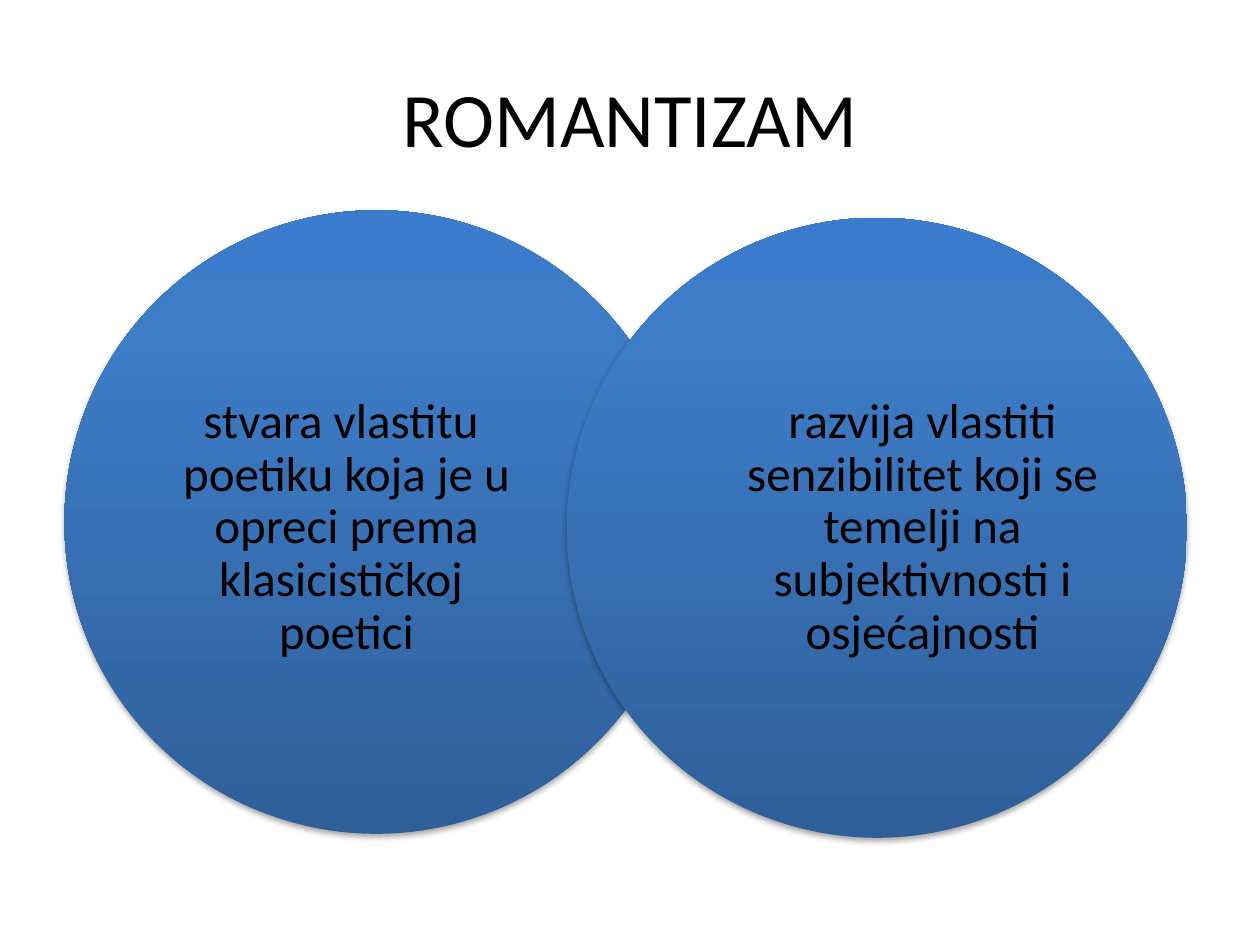
from lxml.etree import SubElement
from pptx import Presentation
from pptx.dml.color import RGBColor
from pptx.enum.shapes import MSO_SHAPE
from pptx.enum.text import MSO_ANCHOR, PP_ALIGN
from pptx.oxml.ns import qn
from pptx.util import Cm, Pt

GRADIENT = [(0, "2F5F99"), (80, "3D7CC7"), (100, "3A7CCB")]
CIRCLES = [
    ((1.3, 4.24, 12.57), (2.54, 6.2, 8.89, 8.89),
     "stvara vlastitu \vpoetiku koja je u opreci prema klasicističkoj \vpoetici"),
    ((11.43, 4.39, 12.5), (14.99, 5.87, 7.21, 9.55),
     "razvija vlastiti senzibilitet koji se temelji na subjektivnosti i osjećajnosti"),
]


def color(value):
    return RGBColor.from_string(value)


def apply(obj, values):
    for name, value in values.items():
        setattr(obj, name, value)


def add_node(parent, tag, **attrs):
    return SubElement(parent, qn(tag), {k: str(v) for k, v in attrs.items()})


class SlideBuilder:
    FONT = "Calibri"
    TEXT = "000000"
    NO_INSETS = dict.fromkeys(
        ("margin_left", "margin_top", "margin_right", "margin_bottom"), 0)

    def __init__(self, prs):
        self.s = prs.slides.add_slide(prs.slide_layouts[6])

    def text(self, box, text, size, frame=None, spacing=1.0):
        tf = self.s.shapes.add_textbox(*map(Cm, box)).text_frame
        apply(tf, {"word_wrap": True, "vertical_anchor": MSO_ANCHOR.MIDDLE,
                   **(frame or {})})
        p = tf.paragraphs[0]
        p.text = text
        apply(p, {"alignment": PP_ALIGN.CENTER, "line_spacing": spacing})
        for r in p.runs:
            apply(r.font, {"name": self.FONT, "size": Pt(size)})
            r.font.color.rgb = color(self.TEXT)

    def circle(self, left, top, diameter):
        sp = self.s.shapes.add_shape(
            MSO_SHAPE.OVAL, Cm(left), Cm(top), Cm(diameter), Cm(diameter))
        sp.line.fill.background()
        self.gradient(sp)
        self.shadow(sp)

    def gradient(self, sp):
        """Fill the shape with the stops of GRADIENT, running upwards."""
        sp.fill.gradient()
        grad = sp.element.spPr.find(qn("a:gradFill"))
        stops = grad.find(qn("a:gsLst"))
        for stop in list(stops):
            stops.remove(stop)
        for position, value in GRADIENT:
            gs = add_node(stops, "a:gs", pos=position * 1000)
            add_node(gs, "a:srgbClr", val=value)
        grad.find(qn("a:lin")).set("ang", str(270 * 60000))

    def shadow(self, sp):
        """Give the shape a soft shadow that falls straight down."""
        sp.shadow.inherit = False
        effects = sp.element.spPr.find(qn("a:effectLst"))
        outer = add_node(effects, "a:outerShdw", blurRad=Pt(3.1), dist=Pt(1.8),
                         dir=90 * 60000, rotWithShape=0)
        clr = add_node(outer, "a:srgbClr", val="000000")
        add_node(clr, "a:alpha", val=35000)


def main():
    prs = Presentation()
    apply(prs, {"slide_width": Cm(25.4), "slide_height": Cm(19.05)})
    builder = SlideBuilder(prs)
    builder.text((1.27, 0.76, 22.86, 3.18), "ROMANTIZAM", 44)
    for circle, box, text in CIRCLES:
        builder.circle(*circle)
        builder.text(box, text, 28, builder.NO_INSETS, spacing=0.9)
    prs.save("out.pptx")


if __name__ == "__main__":
    main()
